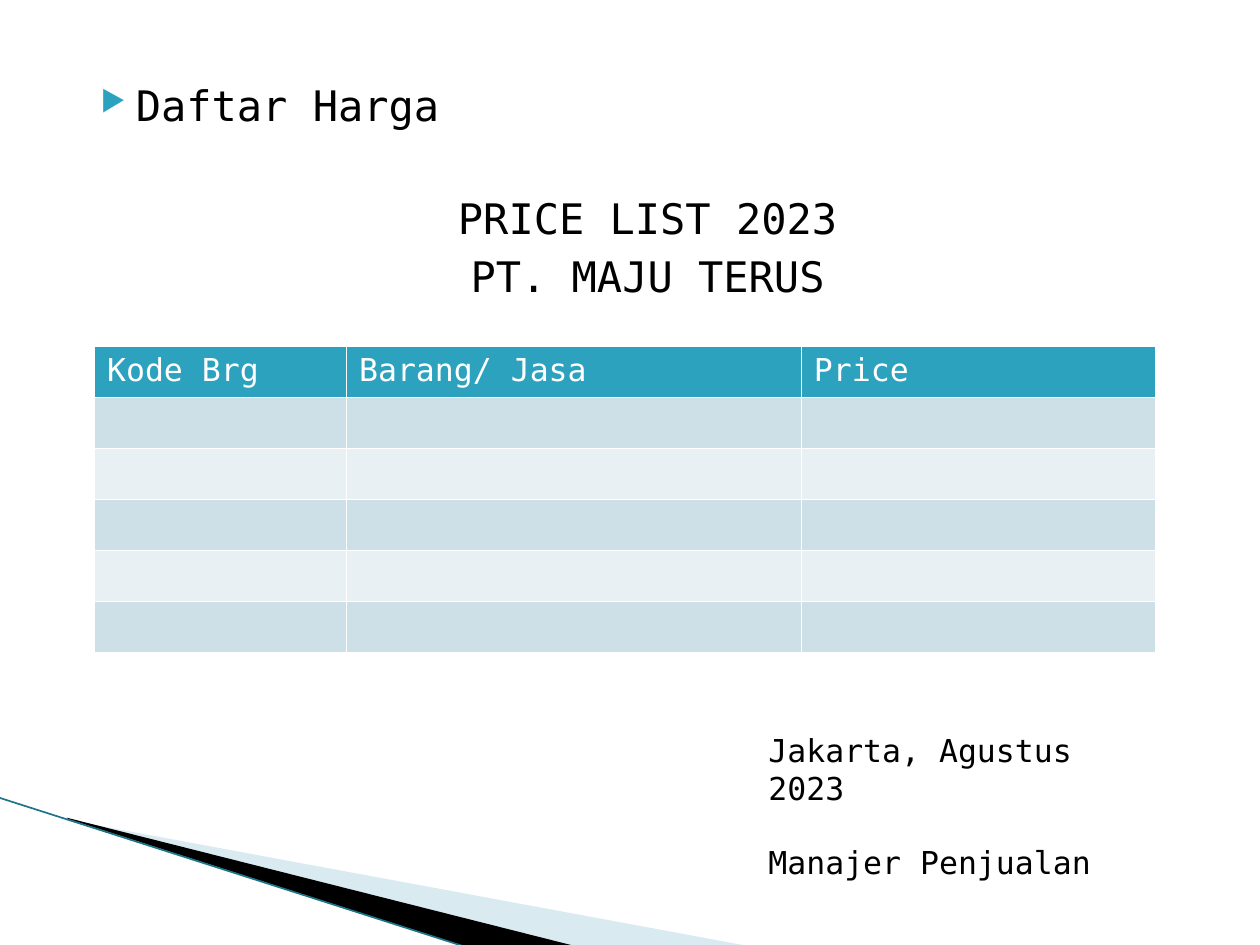
from dataclasses import dataclass

from lxml.etree import SubElement
from pptx import Presentation
from pptx.dml.color import RGBColor
from pptx.enum.shapes import MSO_CONNECTOR as Connector
from pptx.enum.text import MSO_AUTO_SIZE as AutoSize, PP_ALIGN as Align
from pptx.oxml.ns import qn
from pptx.slide import Slide
from pptx.util import Inches, Pt

BLACK = RGBColor(0x00, 0x00, 0x00)
WHITE = RGBColor(0xFF, 0xFF, 0xFF)
TEAL = RGBColor(0x2D, 0xA2, 0xBF)
DARK_TEAL = RGBColor(0x1B, 0x75, 0x87)
PALE_BLUE = RGBColor(0xA0, 0xCB, 0xDC)
BAND_DARK = RGBColor(0xCD, 0xE0, 0xE8)
BAND_LIGHT = RGBColor(0xE8, 0xF0, 0xF4)


@dataclass
class PriceListPage:
    """Draws styled elements on the current slide."""

    page: Slide
    font: str = "DejaVu Sans Mono"

    def span(self, para, text, size, color=BLACK):
        span = para.add_run()
        span.text = text
        span.font.name = self.font
        span.font.size = Pt(size)
        span.font.color.rgb = color

    def wedge(self, points, color, opacity=100):
        corners = [(Inches(x), Inches(y)) for x, y in points]
        builder = self.page.shapes.build_freeform(*corners[0])
        builder.add_line_segments(corners[1:])
        shape = builder.convert_to_shape()
        shape.shadow.inherit = False
        shape.line.fill.background()
        shape.fill.solid()
        shape.fill.fore_color.rgb = color
        if opacity < 100:
            tint = shape.fill._xPr.find(".//" + qn("a:srgbClr"))
            SubElement(tint, qn("a:alpha"), val=str(opacity * 1000))

    def edge(self, start, end, color, width):
        line = self.page.shapes.add_connector(
            Connector.STRAIGHT, *(Inches(value) for value in start + end))
        line.line.color.rgb = color
        line.line.width = Pt(width)
        SubElement(line._element.spPr, qn("a:effectLst"))

    def text(self, left, top, width, height, lines, size):
        box = self.page.shapes.add_textbox(
            Inches(left), Inches(top), Inches(width), Inches(height))
        frame = box.text_frame
        frame.word_wrap = True
        for index, (text, before) in enumerate(lines):
            para = frame.add_paragraph() if index else frame.paragraphs[0]
            if before:
                para.space_before = Pt(before)
            self.span(para, text, size)
        return frame

    def indent(self, para, margin, hanging=0):
        settings = para._p.get_or_add_pPr()
        settings.set("marL", str(Inches(margin)))
        settings.set("indent", str(Inches(-hanging)))
        return settings

    def bullet(self, para, char, color, percent):
        settings = self.indent(para, 0.4, 0.28)
        tint = SubElement(settings, qn("a:buClr"))
        SubElement(tint, qn("a:srgbClr"), val=str(color))
        SubElement(settings, qn("a:buSzPct"), val=str(percent * 1000))
        SubElement(settings, qn("a:buChar"), char=char)

    def cell(self, cell, color):
        settings = cell._tc.get_or_add_tcPr()
        for side in ("a:lnL", "a:lnR", "a:lnT", "a:lnB"):
            border = SubElement(settings, qn(side), w=str(Pt(1)))
            paint = SubElement(border, qn("a:solidFill"))
            SubElement(paint, qn("a:srgbClr"), val=str(WHITE))
        cell.fill.solid()
        cell.fill.fore_color.rgb = color

    def table(self, left, top, widths, height, headings, row_colors):
        table = self.page.shapes.add_table(
            len(row_colors), len(widths), Inches(left), Inches(top),
            Inches(sum(widths)), Inches(height)).table
        for column, width in zip(table.columns, widths):
            column.width = Inches(width)
        for row, color in zip(table.rows, row_colors):
            for cell in row.cells:
                self.cell(cell, color)
        for cell, heading in zip(table.rows[0].cells, headings):
            self.span(cell.text_frame.paragraphs[0], heading, 18, WHITE)


def main():
    deck = Presentation()
    deck.slide_width, deck.slide_height = Inches(10), Inches(7.5)
    page = PriceListPage(deck.slides.add_slide(deck.slide_layouts[6]))

    page.wedge([(0.55, 6.51), (5.95, 7.51), (4.56, 7.51), (0.55, 6.5)], PALE_BLUE, 40)
    page.wedge([(0.53, 6.49), (4.57, 7.51), (3.72, 7.52), (0.54, 6.5)], BLACK)
    page.edge((-0.01, 6.33), (3.71, 7.52), DARK_TEAL, 0.95)

    body = page.text(0.58, 0.58, 9, 5.87, [
        ("Daftar Harga", 0), ("PRICE LIST 2023", 36), ("PT. MAJU TERUS", 4)], 24)
    heading, *titles = body.paragraphs
    page.bullet(heading, "▶", TEAL, 68)
    for title in titles:
        page.indent(title, 0.12)
        title.alignment = Align.CENTER

    page.table(0.75, 2.75, [2, 3.61, 2.81], 2.43,
               ["Kode Brg", "Barang/ Jasa", "Price"],
               [TEAL, BAND_DARK, BAND_LIGHT, BAND_DARK, BAND_LIGHT, BAND_DARK])

    signature = page.text(6, 5.75, 2.92, 1.01, [
        ("Jakarta, Agustus 2023", 0), ("Manajer Penjualan", 21)], 18)
    signature.auto_size = AutoSize.SHAPE_TO_FIT_TEXT

    deck.save("out.pptx")


if __name__ == "__main__":
    main()
